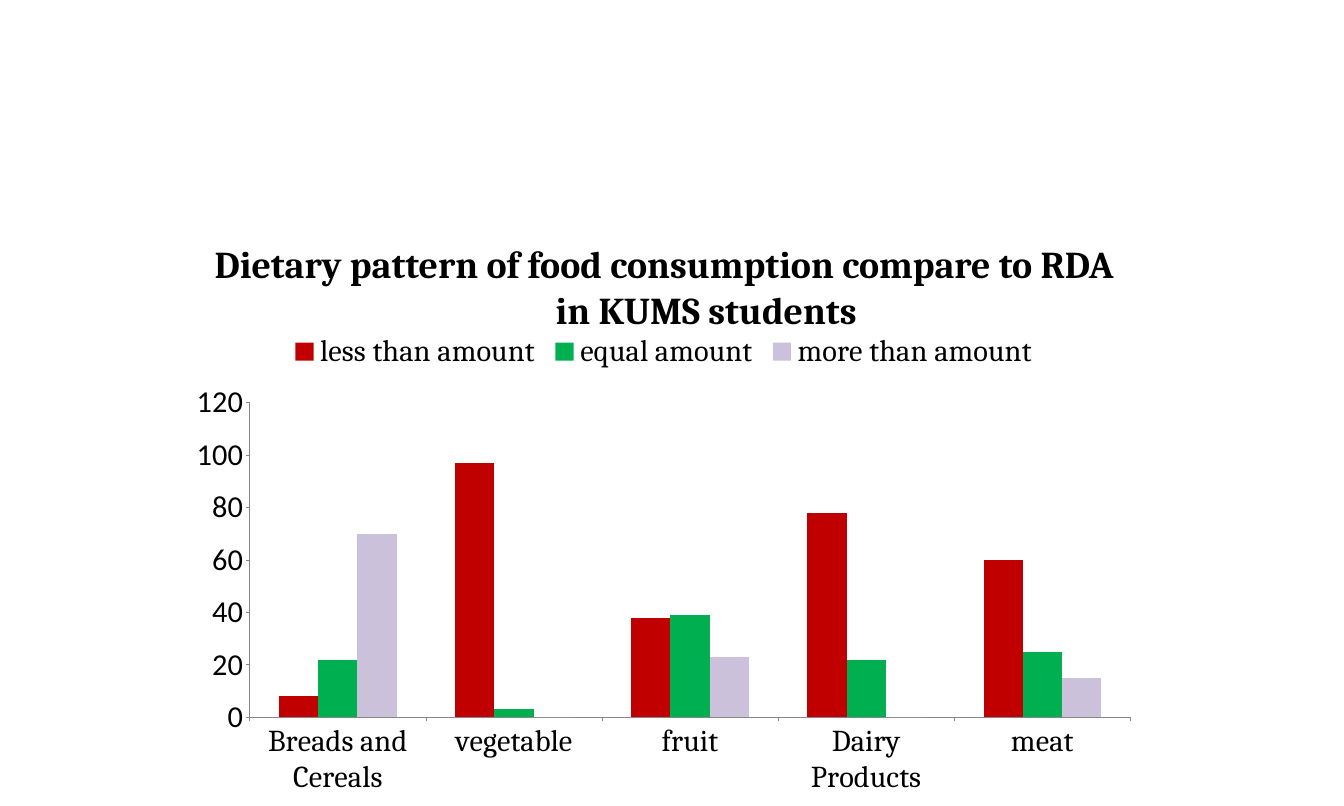
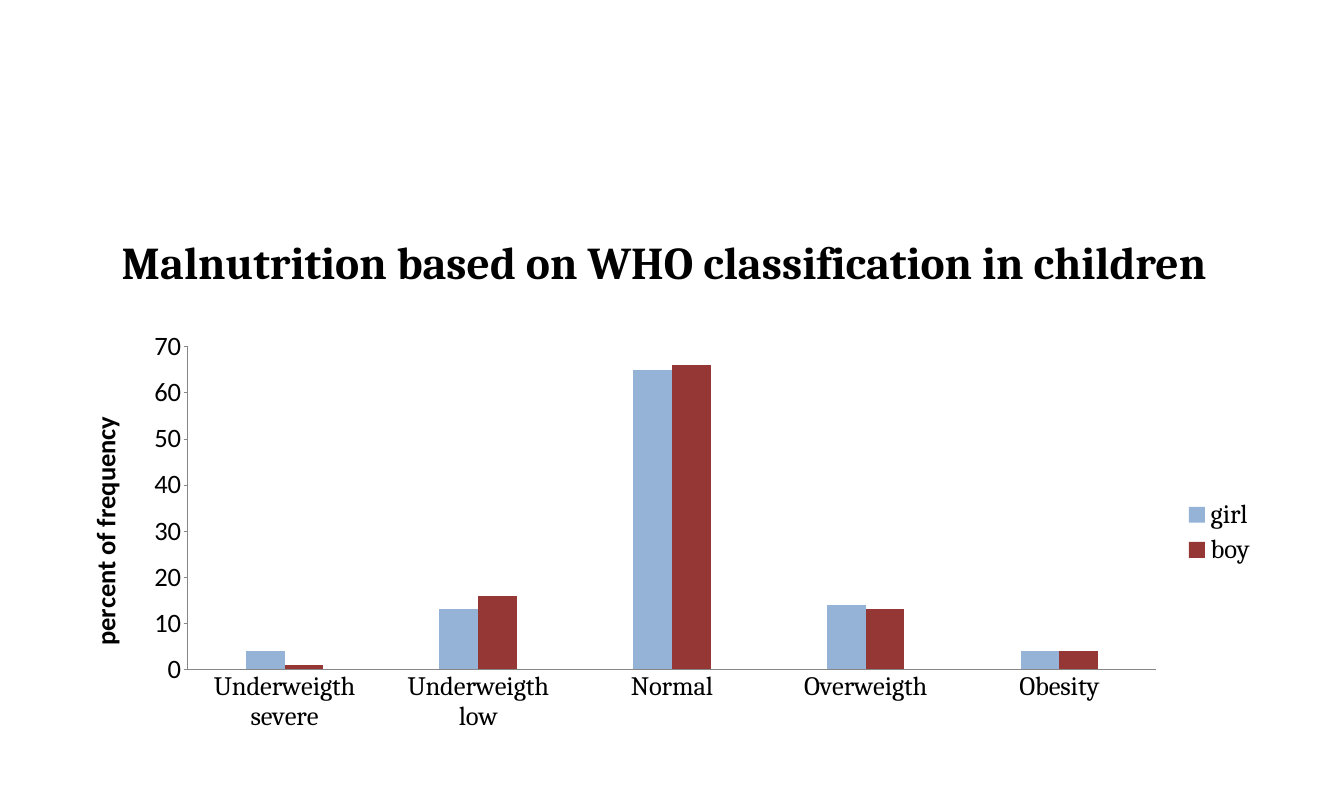
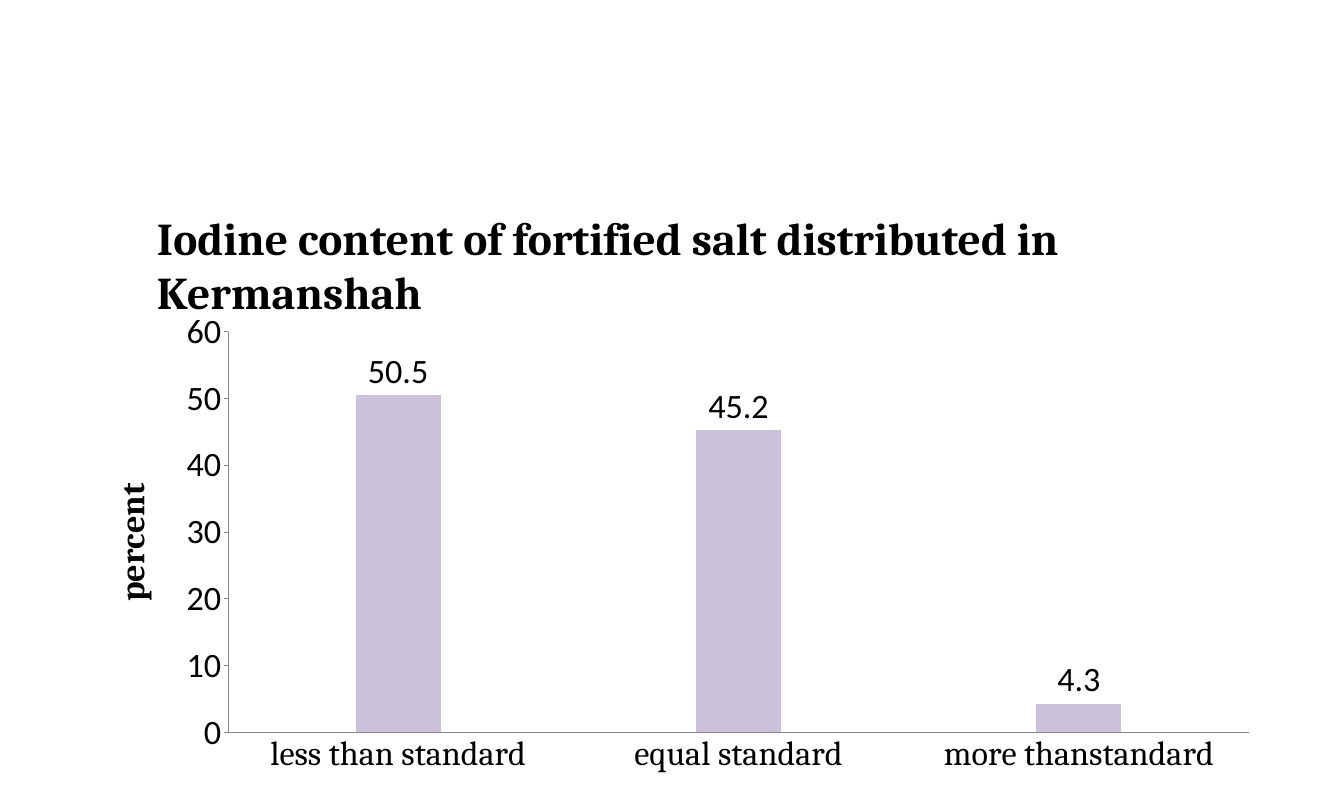
from dataclasses import dataclass

from pptx import Presentation, util as u
from pptx.chart.data import CategoryChartData
from pptx.dml.color import RGBColor
from pptx.enum import chart as c, text
from pptx.oxml import parse_xml
from pptx.oxml.ns import nsdecls

PX = 9144  # EMU per px, 100 px to the inch
SERIF, SANS = "Cambria", "Calibri"
BLACK, GREY, LILAC = "000000", "868686", "CCC1DA"


@dataclass
class Box:
    left: int
    top: int
    width: int
    height: int

    def emu(self) -> tuple[int, ...]:
        return tuple(side * PX for side in (self.left, self.top, self.width, self.height))


@dataclass
class Title:
    words: str
    box: Box
    size: int = 48
    align: text.PP_ALIGN = text.PP_ALIGN.CENTER
    insets: tuple[int, int, int, int] = (17, 8, 17, 8)
    hanging: int = 0


@dataclass
class Series:
    name: str
    values: tuple[float, ...]
    color: str


@dataclass
class ColumnChart:
    box: Box
    plot: Box
    size: int
    categories: tuple[str, ...]
    series: tuple[Series, ...]
    top_value: int
    step: int = 10
    gap: int = 300
    category_tick: c.XL_TICK_MARK = c.XL_TICK_MARK.NONE
    legend: c.XL_LEGEND_POSITION | None = None
    axis_title: str = ""
    axis_title_font: str = SANS
    labels: bool = False


SLIDES = (
    (
        Title("Dietary pattern of food consumption compare to RDA in KUMS students",
              Box(299, 348, 1433, 145), size=40, insets=(10, 5, 95, 5), hanging=123),
        ColumnChart(
            Box(260, 473, 1425, 709), Box(366, 590, 1290, 461), 32,
            ("Breads and Cereals", "vegetable", "fruit", "Dairy Products", "meat"),
            (Series("less than amount", (8, 97, 38, 78, 60), "C00000"),
             Series("equal amount", (22, 3, 39, 22, 25), "00B050"),
             Series("more than amount", (70, 0, 23, 0, 15), LILAC)),
            top_value=120, step=20, gap=150,
            category_tick=c.XL_TICK_MARK.OUTSIDE, legend=c.XL_LEGEND_POSITION.TOP),
    ),
    (
        Title("Malnutrition based on WHO classification in children",
              Box(150, 335, 1646, 98)),
        ColumnChart(
            Box(104, 473, 1748, 614), Box(275, 508, 1419, 473), 28,
            ("Underweigth severe", "Underweigth low", "Normal", "Overweigth", "Obesity"),
            (Series("girl", (4, 13, 65, 14, 4), "95B3D7"),
             Series("boy", (1, 16, 66, 13, 4), "953735")),
            top_value=70, legend=c.XL_LEGEND_POSITION.RIGHT,
            axis_title="percent of frequency"),
    ),
    (
        Title("Iodine content of fortified salt distributed in Kermanshah",
              Box(213, 299, 1693, 175), align=text.PP_ALIGN.LEFT),
        ColumnChart(
            Box(134, 441, 1732, 709), Box(334, 486, 1496, 587), 36,
            ("less than standard", "equal standard", "more thanstandard"),
            (Series("Series 1", (50.5, 45.2, 4.3), LILAC),),
            top_value=60, axis_title="percent", axis_title_font=SERIF, labels=True),
    ),
)


def rgb(color: str) -> RGBColor:
    return RGBColor.from_string(color)


def set_font(font, name: str, size: int, bold: bool = False) -> None:
    font.name, font.size, font.bold = name, u.Pt(size), bold
    font.color.rgb = rgb(BLACK)


def add_title(slide, title: Title) -> None:
    shape = slide.shapes.title
    shape.left, shape.top, shape.width, shape.height = title.box.emu()
    frame = shape.text_frame
    frame.text = title.words
    frame.word_wrap = True
    frame.auto_size = text.MSO_AUTO_SIZE.SHAPE_TO_FIT_TEXT
    frame.vertical_anchor = text.MSO_ANCHOR.TOP
    (frame.margin_left, frame.margin_top,
     frame.margin_right, frame.margin_bottom) = (inset * PX for inset in title.insets)
    paragraph = frame.paragraphs[0]
    paragraph.alignment = title.align
    if title.hanging:
        properties = paragraph._p.get_or_add_pPr()
        properties.set("marL", str(title.hanging * PX))
        properties.set("indent", str(-title.hanging * PX))
    set_font(paragraph.font, SERIF, title.size, bold=True)


def place_plot(chart, box: Box, plot: Box) -> None:
    """Fix the area inside the axes, given in slide px."""
    fractions = {
        "x": (plot.left - box.left) / box.width,
        "y": (plot.top - box.top) / box.height,
        "w": plot.width / box.width,
        "h": plot.height / box.height,
    }
    modes = '<c:xMode val="edge"/><c:yMode val="edge"/>'
    sides = "".join(f'<c:{side} val="{value:.4f}"/>' for side, value in fractions.items())
    layout = parse_xml(
        f'<c:layout {nsdecls("c")}><c:manualLayout><c:layoutTarget val="inner"/>'
        f"{modes}{sides}</c:manualLayout></c:layout>")
    area = chart._chartSpace.chart.plotArea
    for old in area.findall(layout.tag):
        area.remove(old)
    area.insert(0, layout)


def format_axis(axis, font: str, size: int, tick: c.XL_TICK_MARK) -> None:
    axis.has_major_gridlines = False
    axis.major_tick_mark = tick
    axis.minor_tick_mark = c.XL_TICK_MARK.NONE
    axis.format.line.color.rgb = rgb(GREY)
    axis.format.line.width = u.Pt(0.75)
    set_font(axis.tick_labels.font, font, size)


def add_column_chart(slide, column: ColumnChart) -> None:
    data = CategoryChartData()
    data.categories = column.categories
    for series in column.series:
        data.add_series(series.name, series.values)
    chart = slide.shapes.add_chart(
        c.XL_CHART_TYPE.COLUMN_CLUSTERED, *column.box.emu(), data).chart
    set_font(chart.font, SANS, column.size)
    chart.has_title = False
    place_plot(chart, column.box, column.plot)

    format_axis(chart.category_axis, SERIF, column.size, column.category_tick)
    value_axis = chart.value_axis
    format_axis(value_axis, SANS, column.size, c.XL_TICK_MARK.OUTSIDE)
    value_axis.minimum_scale, value_axis.maximum_scale = 0, column.top_value
    value_axis.major_unit = column.step
    if column.axis_title:
        frame = value_axis.axis_title.text_frame
        frame.text = column.axis_title
        set_font(frame.paragraphs[0].font, column.axis_title_font, column.size, bold=True)

    chart.has_legend = column.legend is not None
    if chart.has_legend:
        chart.legend.position = column.legend
        chart.legend.include_in_layout = False
        set_font(chart.legend.font, SERIF, column.size)

    plot = chart.plots[0]
    plot.gap_width, plot.overlap, plot.vary_by_categories = column.gap, 0, False
    for drawn, series in zip(plot.series, column.series):
        drawn.format.fill.solid()
        drawn.format.fill.fore_color.rgb = rgb(series.color)
    if column.labels:
        plot.has_data_labels = True
        labels = plot.data_labels
        labels.show_value = True
        labels.position = c.XL_LABEL_POSITION.OUTSIDE_END
        set_font(labels.font, SANS, column.size)


def main() -> None:
    presentation = Presentation()
    presentation.slide_width, presentation.slide_height = 1969 * PX, 1181 * PX
    title_only = presentation.slide_layouts[5]
    for title, column in SLIDES:
        slide = presentation.slides.add_slide(title_only)
        add_title(slide, title)
        add_column_chart(slide, column)
    presentation.save("out.pptx")


if __name__ == "__main__":
    main()
